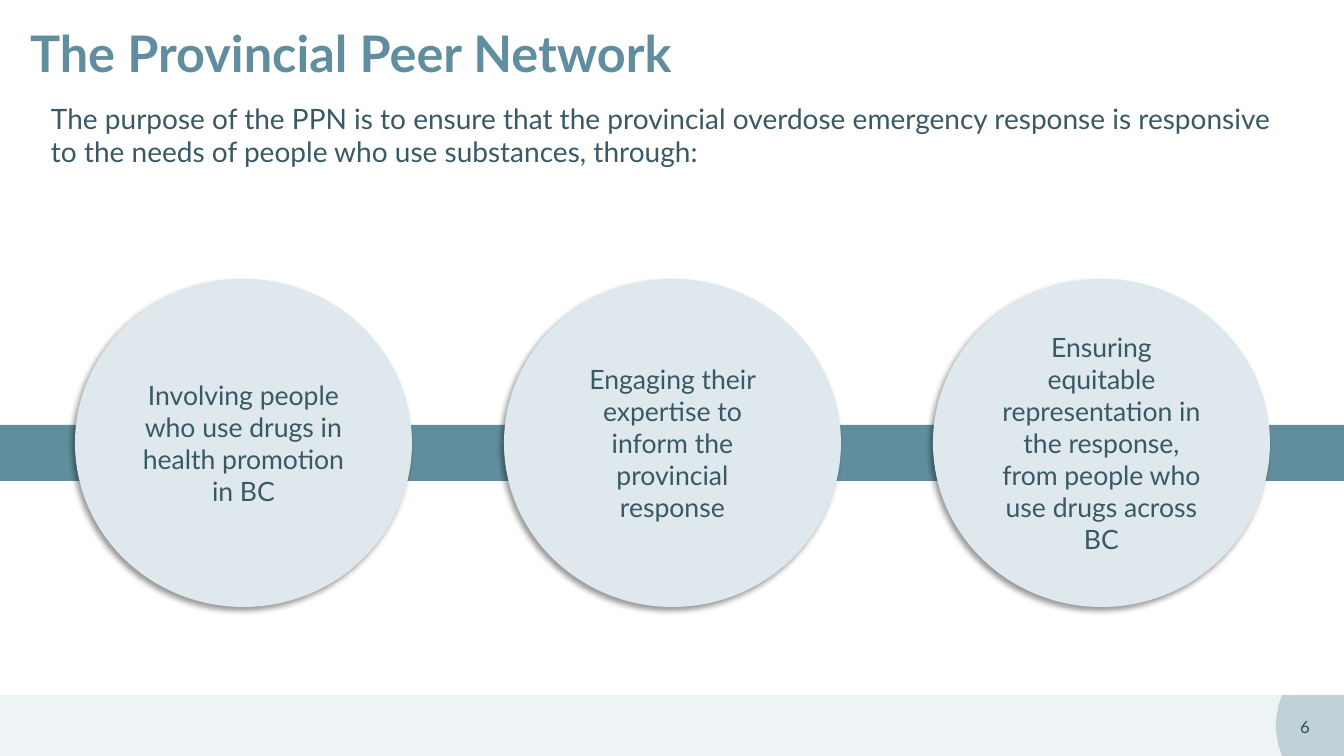
from lxml import etree
from pptx import Presentation
from pptx.dml.color import RGBColor
from pptx.enum.shapes import MSO_SHAPE
from pptx.enum.text import MSO_ANCHOR, MSO_AUTO_SIZE, PP_ALIGN
from pptx.oxml import parse_xml
from pptx.oxml.ns import qn
from pptx.util import Pt

RECT, OVAL = MSO_SHAPE.RECTANGLE, MSO_SHAPE.OVAL
LEFT, MID = PP_ALIGN.LEFT, PP_ALIGN.CENTER
TOP, CORE = MSO_ANCHOR.TOP, MSO_ANCHOR.MIDDLE
FIXED = MSO_AUTO_SIZE.NONE

TEAL = RGBColor(0x61, 0x8E, 0x9E)
PALE = RGBColor(0xDF, 0xE8, 0xEC)
MIST = RGBColor(0xC0, 0xD2, 0xD8)
SLATE = RGBColor(0x39, 0x59, 0x65)
DEEP = RGBColor(0x2E, 0x4E, 0x5C)

SCALE = 914400 / 100.8
WIDE, HIGH = 1344, 756
FOOT = 695

SHADOW = (
    '<a:effectLst xmlns:a="http://schemas.openxmlformats.org/drawingml/2006/main">'
    '<a:outerShdw blurRad="50800" dist="38100" dir="8100000" algn="tr" rotWithShape="0">'
    '<a:srgbClr val="000000"><a:alpha val="40000"/></a:srgbClr>'
    '</a:outerShdw></a:effectLst>'
)

GOALS = [
    "Involving people who use drugs in health promotion in BC",
    "Engaging their expertise to inform the provincial response",
    "Ensuring equitable representation in the response, from people who use drugs across BC",
]


def px(n):
    return round(n * SCALE)


def write(frame, text, size=19, color=SLATE, bold=False, align=LEFT,
          anchor=TOP, inset=(10, 5), line=None):
    frame.word_wrap = True
    frame.auto_size = FIXED
    frame.vertical_anchor = anchor
    frame.margin_left = frame.margin_right = px(inset[0])
    frame.margin_top = frame.margin_bottom = px(inset[1])
    para = frame.paragraphs[0]
    para.alignment = align
    para.space_before = Pt(0)
    if line:
        para.line_spacing = line
    run = para.add_run()
    run.text = text
    font = run.font
    font.name, font.size, font.bold = "Lato", Pt(size), bold
    font.color.rgb = color


class Deck:
    def __init__(self):
        self.show = Presentation()
        self.show.slide_width, self.show.slide_height = px(WIDE), px(HIGH)
        self.slide = self.show.slides.add_slide(self.show.slide_layouts[5])
        self.items = self.slide.shapes

    def paint(self, shape, fill, alpha=None):
        shape.shadow.inherit = False
        shape.fill.solid()
        shape.fill.fore_color.rgb = fill
        shape.line.fill.background()
        if alpha:
            tone = shape.fill._xPr.find(qn("a:solidFill"))[0]
            etree.SubElement(tone, qn("a:alpha")).set("val", str(alpha * 1000))
        return shape

    def shape(self, kind, box, fill, alpha=None):
        return self.paint(self.items.add_shape(kind, *map(px, box)), fill, alpha)

    def shade(self, shape):
        props = shape._element.spPr
        props.replace(props.find(qn("a:effectLst")), parse_xml(SHADOW))

    def outline(self, dots, fill):
        draw = self.items.build_freeform(*dots[0], scale=SCALE)
        draw.add_line_segments(dots[1:], close=True)
        return self.paint(draw.convert_to_shape(), fill)

    def title(self, text, box, **style):
        head = self.items.title
        head.left, head.top, head.width, head.height = map(px, box)
        write(head.text_frame, text, **style)

    def text(self, text, box, **style):
        write(self.items.add_textbox(*map(px, box)).text_frame, text, **style)


def main():
    deck = Deck()
    deck.shape(RECT, (0, FOOT, 1287, HIGH - FOOT), PALE, alpha=50)
    half = (HIGH - FOOT) / 2
    curve = [(1276 + 6 * (step / 10) ** 2, FOOT + half + half * step / 10)
             for step in range(-10, 11)]
    deck.outline([(WIDE, FOOT)] + curve + [(WIDE, HIGH)], MIST)
    deck.text("6", (1276, 705, 58, 43), size=12, color=DEEP, align=MID, anchor=CORE)

    deck.shape(RECT, (0, 425, WIDE, 56), TEAL)
    for spot, goal in enumerate(GOALS):
        disc = deck.shape(OVAL, (75 + 429 * spot, 279, 337, 328), PALE)
        deck.shade(disc)
        write(disc.text_frame, goal, align=MID, anchor=CORE, inset=(16, 12))

    deck.title("The Provincial Peer Network", (20, -2, 1111, 117),
               size=36, color=TEAL, bold=True, anchor=CORE, line=0.9)
    deck.text("The purpose of the PPN is to ensure that the provincial overdose "
              "emergency response is responsive to the needs of people who use "
              "substances, through:", (41, 96, 1256, 78), size=20)
    deck.show.save("out.pptx")


if __name__ == "__main__":
    main()
